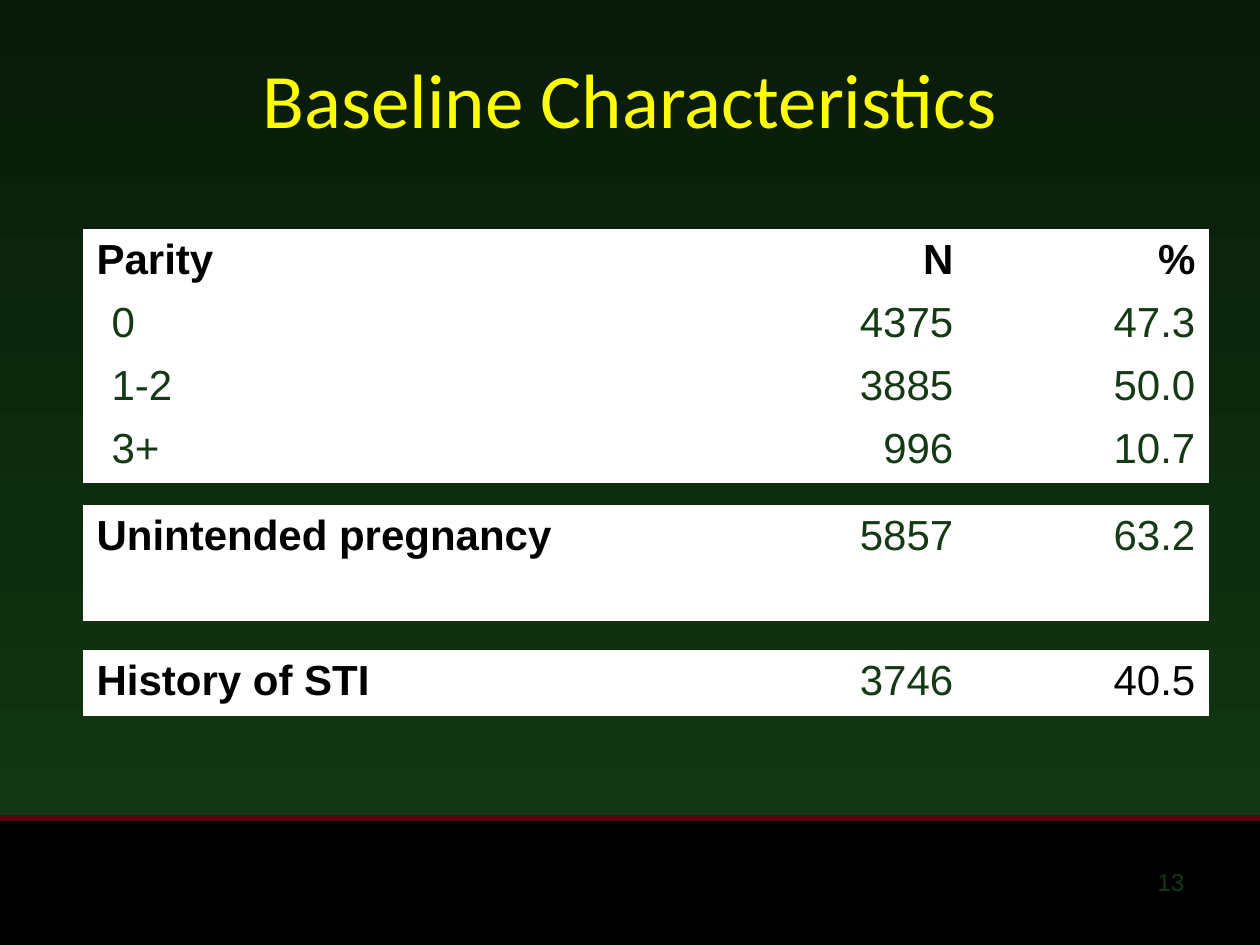
from lxml.etree import SubElement
from pptx import Presentation
from pptx.dml.color import RGBColor
from pptx.enum.shapes import MSO_CONNECTOR, MSO_SHAPE
from pptx.enum.text import MSO_ANCHOR, PP_ALIGN
from pptx.oxml.ns import qn
from pptx.util import Pt

PX = 914400 // 126
WIDTH, HEIGHT = 1260, 945
GREEN, BLACK, WHITE = "133A14", "000000", "FFFFFF"


def color(hex_value):
    return RGBColor.from_string(hex_value)


def write(frame, text, align, hex_value, **font_values):
    """Put one formatted paragraph in a text frame and return it."""
    frame.word_wrap = True
    paragraph = frame.paragraphs[0]
    paragraph.alignment = align
    run = paragraph.add_run()
    run.text = text
    for name, value in font_values.items():
        setattr(run.font, name, value)
    run.font.color.rgb = color(hex_value)
    return paragraph


deck = Presentation()
deck.slide_width, deck.slide_height = WIDTH * PX, HEIGHT * PX
slide = deck.slides.add_slide(deck.slide_layouts[6])
shapes = slide.shapes

# Background
backdrop = slide.background.fill
backdrop.gradient()
backdrop.gradient_angle = 270
for stop, shade in zip(backdrop.gradient_stops, ("091B09", GREEN)):
    stop.color.rgb = color(shade)

# Footer band and rule
footer = shapes.add_shape(MSO_SHAPE.RECTANGLE, 0, 819 * PX, WIDTH * PX, 126 * PX)
footer.shadow.inherit = False
footer.fill.solid()
footer.fill.fore_color.rgb = color(BLACK)
footer.line.fill.background()

rule = shapes.add_connector(MSO_CONNECTOR.STRAIGHT, 0, 818 * PX, WIDTH * PX, 818 * PX)
rule.line.color.rgb = color("5F000F")
rule.line.width = Pt(3)
SubElement(rule._element.spPr, qn("a:effectLst"))

# Title and page number
title = shapes.add_textbox(63 * PX, 38 * PX, 1134 * PX, 120 * PX).text_frame
title.vertical_anchor = MSO_ANCHOR.MIDDLE
write(title, "Baseline Characteristics", PP_ALIGN.CENTER, "FFFF00",
      name="Calibri", size=Pt(44))
page_number = shapes.add_textbox(903 * PX, 861 * PX, 294 * PX, 66 * PX).text_frame
write(page_number, "13", PP_ALIGN.RIGHT, GREEN, name="Arial", size=Pt(14))

# Tables: top, row height, rows
COLUMN_WIDTHS = (577, 305, 242)
TABLES = [
    (230, 60, [("Parity", "N", "%"), ("0", "4375", "47.3"),
               ("1-2", "3885", "50.0"), ("3+", "996", "10.7")]),
    (506, 113, [("Unintended pregnancy", "5857", "63.2")]),
    (651, 63, [("History of STI", "3746", "40.5")]),
]
for top, row_height, rows in TABLES:
    table = shapes.add_table(len(rows), 3, 84 * PX, top * PX, sum(COLUMN_WIDTHS) * PX,
                             row_height * len(rows) * PX).table
    table.first_row = table.horz_banding = False
    for column, width in zip(table.columns, COLUMN_WIDTHS):
        column.width = width * PX
    for r, values in enumerate(rows):
        for c, value in enumerate(values):
            cell = table.cell(r, c)
            heading = r == 0 and (c == 0 or value in ("N", "%"))
            paragraph = write(cell.text_frame, value,
                              PP_ALIGN.RIGHT if c else PP_ALIGN.LEFT,
                              BLACK if heading or value == "40.5" else GREEN,
                              name="Arial", size=Pt(24), bold=heading)
            if c == 0 and not heading:
                paragraph.level = 1
                properties = paragraph._p.get_or_add_pPr()
                properties.set("marL", str(15 * PX))
                properties.set("indent", "0")
            borders = cell._tc.get_or_add_tcPr()
            for side in ("lnL", "lnR", "lnT", "lnB"):
                points = 3 if side == "lnB" and r == 0 else 1
                border = SubElement(borders, qn(f"a:{side}"), w=str(Pt(points)))
                SubElement(SubElement(border, qn("a:solidFill")), qn("a:srgbClr"), val=WHITE)
            cell.fill.solid()
            cell.fill.fore_color.rgb = color(WHITE)

deck.save("out.pptx")
